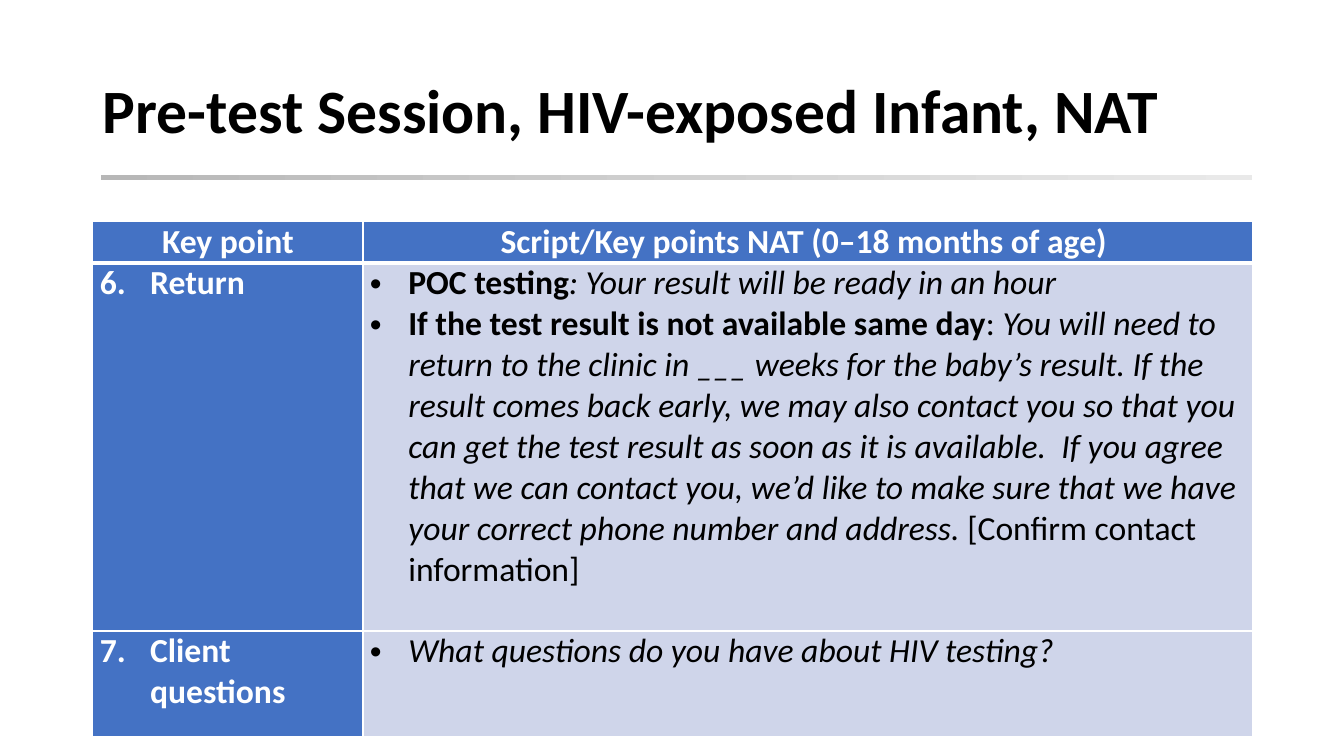
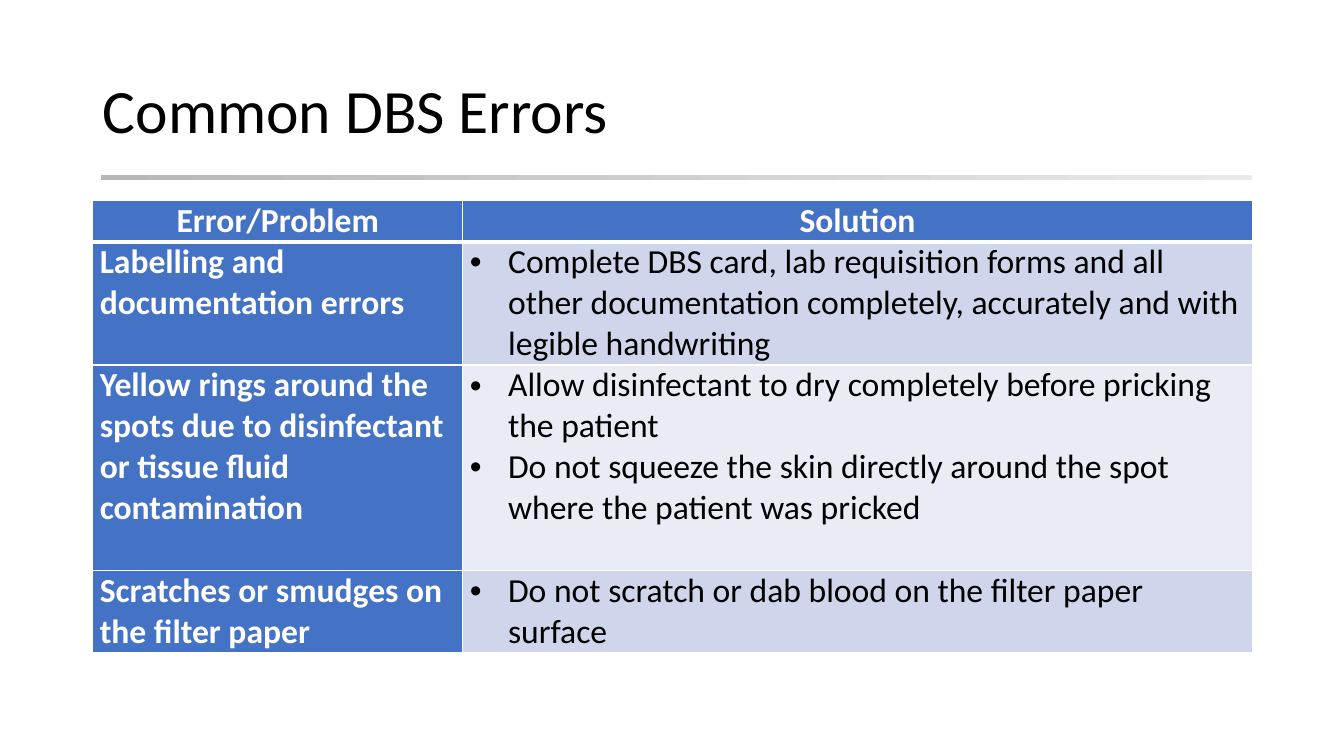
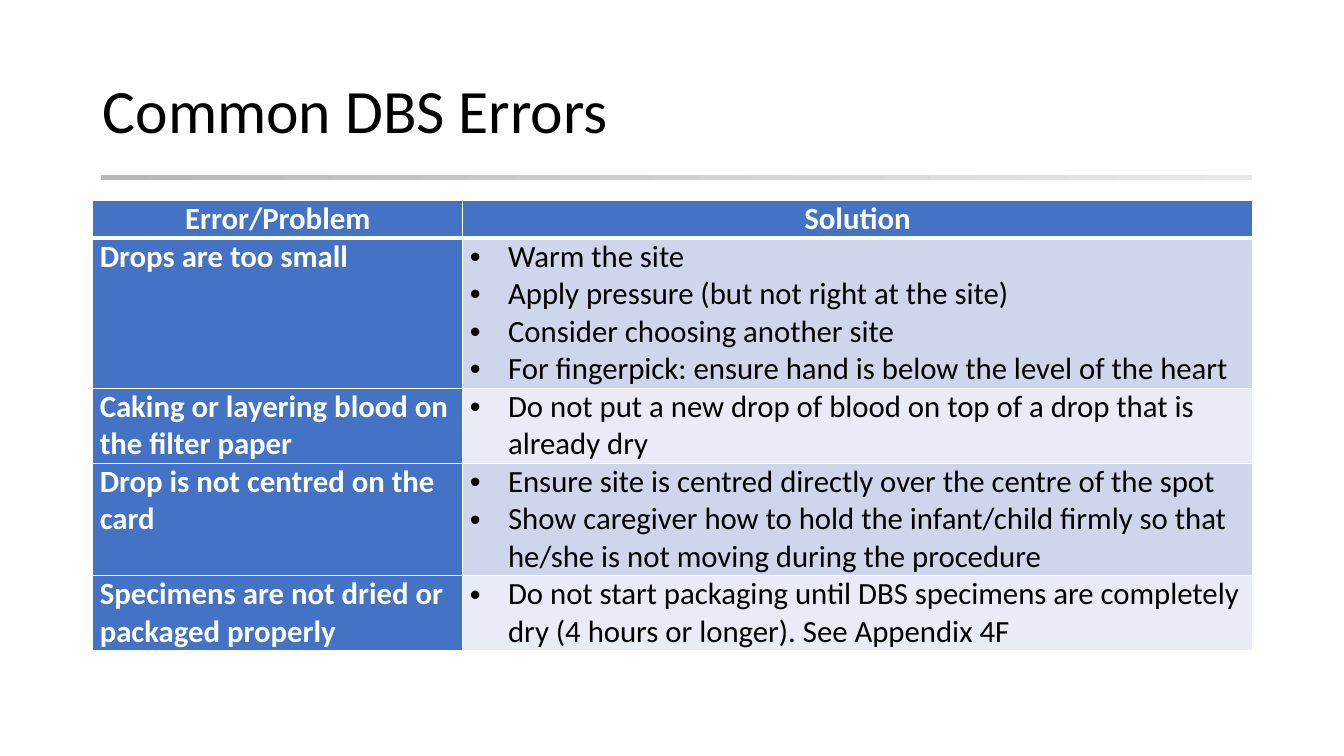
from pptx import Presentation
from pptx.dml.color import RGBColor
from pptx.enum.shapes import MSO_SHAPE as Shape
from pptx.enum.text import MSO_ANCHOR as Anchor, MSO_AUTO_SIZE as Fit, PP_ALIGN as Align
from pptx.oxml.ns import qn
from pptx.util import Inches, Pt
from lxml.etree import SubElement as sub

WHITE, BLACK, BLUE = "FFFFFF", "000000", "4472C4"
BANDS = ["CFD5EA", "E9EBF5"]


def rgb(code):
    return RGBColor.from_string(code)


class Deck:
    font = "Calibri"
    left, wide = 0.92, 11.5

    def __init__(self):
        self.prs = Presentation()
        self.prs.slide_width = Inches(13.33)
        self.prs.slide_height = Inches(7.5)

    def page(self, title, bold=False):
        self.slide = self.prs.slides.add_slide(self.prs.slide_layouts[5])
        self.rule()
        box = self.slide.shapes.title
        box.left, box.top = Inches(self.left), Inches(0.4)
        box.width, box.height = Inches(self.wide), Inches(1.45)
        frame = box.text_frame
        frame.text = title
        frame.word_wrap = True
        frame.auto_size = Fit.NONE
        frame.vertical_anchor = Anchor.MIDDLE
        para = frame.paragraphs[0]
        para.alignment = Align.LEFT
        para.line_spacing = 0.9
        self.style(para.runs[0], 44, BLACK, bold)

    def rule(self):
        bar = self.slide.shapes.add_shape(
            Shape.RECTANGLE, Inches(1), Inches(1.74), Inches(11.42), Inches(0.05))
        bar.shadow.inherit = False
        bar.line.fill.background()
        bar.fill.gradient()
        bar.fill.gradient_angle = 0
        for stop, code in zip(bar.fill.gradient_stops, ["B7B7B7", "E9E9E9"]):
            stop.color.rgb = rgb(code)

    def style(self, run, size, color, bold=False, slant=False):
        font = run.font
        font.name, font.size = self.font, Pt(size)
        font.bold, font.italic = bold, slant
        font.color.rgb = rgb(color)

    def mark(self, para, hang, tag, **attrs):
        props = para._p.get_or_add_pPr()
        props.set("marL", str(Inches(hang)))
        props.set("indent", str(-Inches(hang)))
        sub(props, qn("a:buFont"), typeface="Arial" if tag == "a:buChar" else "+mj-lt")
        sub(props, qn(tag), **attrs)

    def edge(self, cell, first, second):
        props = cell._tc.get_or_add_tcPr()
        widths = {"L": 1, "R": 1, "T": 3 if second else 1, "B": 3 if first else 1}
        for spot, (side, width) in enumerate(widths.items()):
            line = props.makeelement(qn("a:ln" + side), {"w": str(Pt(width))})
            sub(sub(line, qn("a:solidFill")), qn("a:srgbClr"), val=WHITE)
            props.insert(spot, line)

    def cell(self, cell, paras, size, fill, color, bold):
        cell.margin_left = cell.margin_right = Inches(0.07)
        cell.margin_top = cell.margin_bottom = 0
        cell.fill.solid()
        cell.fill.fore_color.rgb = rgb(fill)
        frame = cell.text_frame
        for num, parts in enumerate(paras):
            para = frame.add_paragraph() if num else frame.paragraphs[0]
            if isinstance(parts, str):
                parts = [(parts, "b" if bold else "")]
            for text, look in parts:
                run = para.add_run()
                run.text = text
                self.style(run, size, color, "b" in look, "i" in look)
        return frame.paragraphs

    def table(self, top, split, heights, head, rows, size=24, start=None):
        grid = self.slide.shapes.add_table(
            len(heights), 2, Inches(self.left), Inches(top),
            Inches(self.wide), Inches(sum(heights))).table
        grid.horz_banding = False
        for col, width in zip(grid.columns, [split, self.wide - split]):
            col.width = Inches(width)
        for row, height in zip(grid.rows, heights):
            row.height = Inches(height)
        for col, text in enumerate(head):
            spot = grid.cell(0, col)
            self.cell(spot, [text], size, BLUE, WHITE, True)[0].alignment = Align.CENTER
            spot.vertical_anchor = Anchor.MIDDLE
            self.edge(spot, True, False)
        for num, (label, points) in enumerate(rows):
            key, body = grid.cell(num + 1, 0), grid.cell(num + 1, 1)
            para = self.cell(key, [label], size, BLUE, WHITE, True)[0]
            if start:
                self.mark(para, 0.5, "a:buAutoNum", type="arabicPeriod", startAt=str(start + num))
            band = BANDS[0] if start else BANDS[num % 2]
            for para in self.cell(body, points, size, band, BLACK, False):
                self.mark(para, 0.38, "a:buChar", char="•")
            for spot in (key, body):
                self.edge(spot, False, num == 0)


def main():
    deck = Deck()
    deck.page("Pre-test Session, HIV-exposed Infant, NAT", bold=True)
    deck.table(2.2, 2.68, [0.41, 3.65, 1.05],
               ["Key point", "Script/Key points NAT (0–18 months of age) "], [
        ("Return", [
            [("POC testing", "b"), (": Your result will be ready in an hour", "i")],
            [("If the test result is not available same day", "b"), (":", ""),
             (" You will need to return to the clinic in ___ weeks for the baby’s result. "
              "If the result comes back early, we may also contact you so that you can get "
              "the test result as soon as it is available.  If you agree that we can contact "
              "you, we’d like to make sure that we have your correct phone number and "
              "address. ", "i"),
             ("[Confirm contact information]", "")]]),
        ("Client questions", [[("What questions do you have about HIV testing?", "i")]]),
    ], start=6)

    errors, head = "Common DBS Errors", ["Error/Problem", "Solution"]
    deck.page(errors)
    deck.table(1.99, 3.67, [0.41, 1.22, 2.04, 0.81], head, [
        ("Labelling and documentation errors", [
            "Complete DBS card, lab requisition forms and all other documentation "
            "completely, accurately and with legible handwriting"]),
        ("Yellow rings around the spots due to disinfectant or tissue fluid contamination", [
            "Allow disinfectant to dry completely before pricking the patient",
            "Do not squeeze the skin directly around the spot where the patient was pricked"]),
        ("Scratches or smudges on the filter paper", [
            "Do not scratch or dab blood on the filter paper surface"]),
    ])

    deck.page(errors)
    deck.table(1.99, 3.67, [0.37, 1.49, 0.74, 1.11, 0.74], head, [
        ("Drops are too small", [
            "Warm the site",
            "Apply pressure (but not right at the site)",
            "Consider choosing another site",
            "For fingerpick: ensure hand is below the level of the heart"]),
        ("Caking or layering blood on the filter paper", [
            "Do not put a new drop of blood on top of a drop that is already dry"]),
        ("Drop is not centred on the card", [
            "Ensure site is centred directly over the centre of the spot",
            "Show caregiver how to hold the infant/child firmly so that he/she is not "
            "moving during the procedure"]),
        ("Specimens are not dried or packaged properly", [
            "Do not start packaging until DBS specimens are completely dry "
            "(4 hours or longer). See Appendix 4F"]),
    ], size=22)
    deck.prs.save("out.pptx")


if __name__ == "__main__":
    main()
